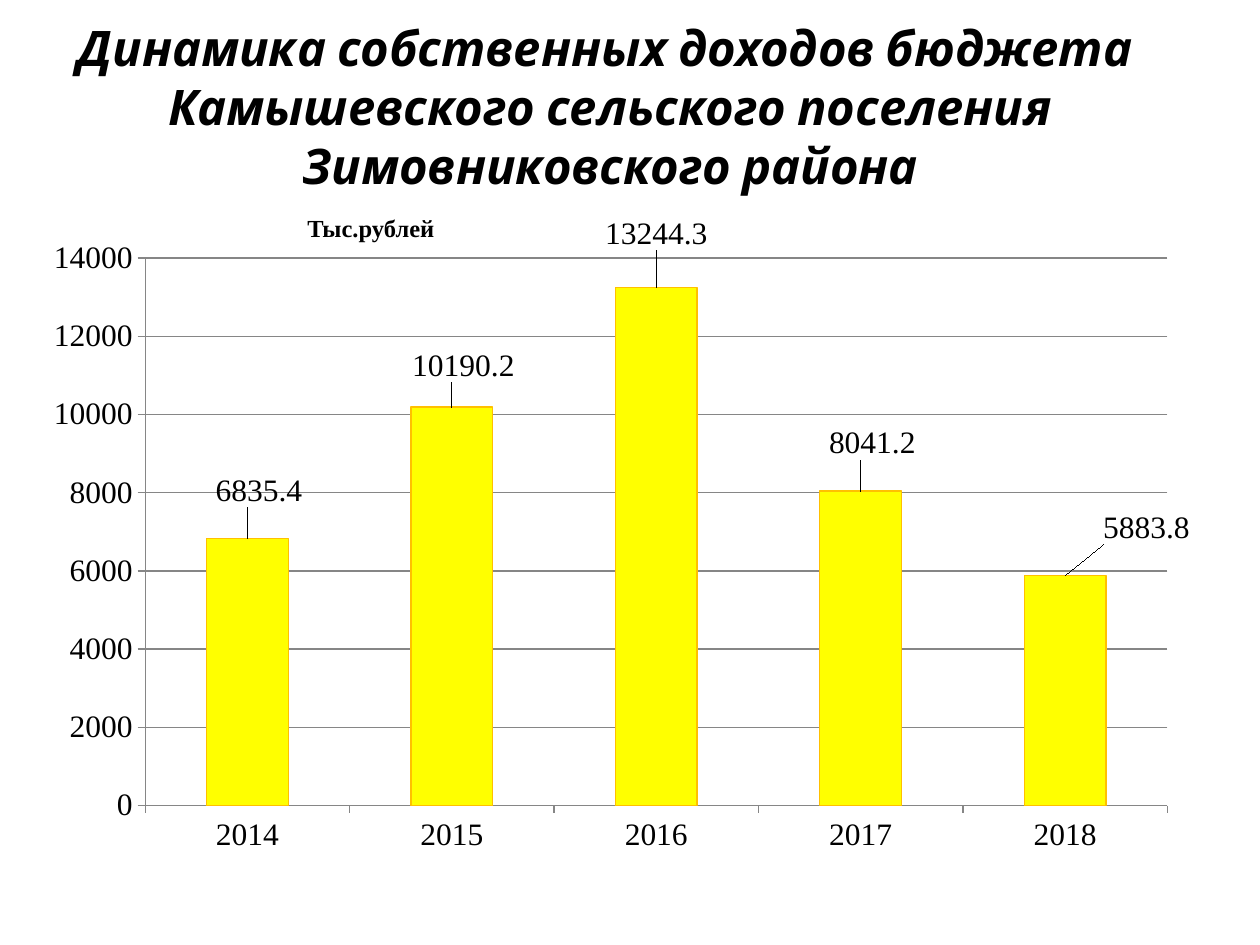
from lxml import etree
from pptx import Presentation
from pptx.chart.data import CategoryChartData
from pptx.dml.color import RGBColor
from pptx.enum import chart as charts, text
from pptx.oxml.ns import qn
from pptx.util import Inches, Pt

BLACK = RGBColor(0x00, 0x00, 0x00)
YELLOW = RGBColor(0xFF, 0xFF, 0x00)
ORANGE = RGBColor(0xFF, 0xC0, 0x00)
GREY = RGBColor(0x86, 0x86, 0x86)
SERIF = "Times New Roman"

# Year, income, and label shift as fractions of the chart size
INCOMES = [
    ("2014", 6835.4, (0.01, -0.04)),
    ("2015", 10190.2, (0.01, -0.03)),
    ("2016", 13244.3, (0, -0.05)),
    ("2017", 8041.2, (0.01, -0.04)),
    ("2018", 5883.8, (0.07, -0.04)),
]


def add_text(page, content, left, top, width, height, *, size, font=SERIF,
             italic=False, align=text.PP_ALIGN.LEFT, anchor=text.MSO_ANCHOR.TOP):
    box = page.shapes.add_textbox(Inches(left), Inches(top), Inches(width), Inches(height))
    frame = box.text_frame
    frame.word_wrap = True
    frame.vertical_anchor = anchor
    para = frame.paragraphs[0]
    para.text = content
    para.alignment = align
    for span in para.runs:
        span.font.name = font
        span.font.size = Pt(size)
        span.font.bold = True
        span.font.italic = italic
        span.font.color.rgb = BLACK


def make_layout(**settings):
    """Return a manual chart layout holding the given settings."""
    layout = etree.Element(qn("c:layout"))
    manual = etree.SubElement(layout, qn("c:manualLayout"))
    for name, value in settings.items():
        etree.SubElement(manual, qn(f"c:{name}")).set("val", str(value))
    return layout


def style_axis(axis):
    axis.major_tick_mark = charts.XL_TICK_MARK.OUTSIDE
    axis.minor_tick_mark = charts.XL_TICK_MARK.NONE
    axis.format.line.color.rgb = GREY
    axis.format.line.width = Pt(0.75)


def add_income_chart(page, left, top, width, height):
    data = CategoryChartData(number_format="General")
    data.categories = [year for year, _, _ in INCOMES]
    data.add_series("Series 1", [income for _, income, _ in INCOMES])
    chart = page.shapes.add_chart(
        charts.XL_CHART_TYPE.COLUMN_CLUSTERED, Inches(left), Inches(top),
        Inches(width), Inches(height), data).chart
    chart.has_title = False
    chart.has_legend = False
    chart.font.name = SERIF
    chart.font.size = Pt(18)
    chart.font.color.rgb = BLACK

    # Axes and gridlines
    style_axis(chart.category_axis)
    style_axis(chart.value_axis)
    chart.value_axis.minimum_scale = 0
    chart.value_axis.maximum_scale = 14000
    chart.value_axis.major_unit = 2000
    chart.value_axis.has_major_gridlines = True
    chart.value_axis.major_gridlines.format.line.color.rgb = GREY

    # Columns
    plot = chart.plots[0]
    plot.gap_width = 150
    plot.vary_by_categories = False
    series = plot.series[0]
    series.format.fill.solid()
    series.format.fill.fore_color.rgb = YELLOW
    series.format.line.color.rgb = ORANGE
    series.format.line.width = Pt(0.75)

    # Value labels, each moved away from its column
    series.data_labels.show_value = True
    for index in range(len(INCOMES)):
        label = series.points[index].data_label
        label.position = charts.XL_LABEL_POSITION.OUTSIDE_END
    labels = chart.element.findall(".//" + qn("c:dLbl"))
    for label, (_, _, (right, down)) in zip(labels, INCOMES):
        label.insert(1, make_layout(x=right, y=down))

    # Place of the plot inside the chart
    area = chart.element.find(".//" + qn("c:plotArea"))
    for old in area.findall(qn("c:layout")):
        area.remove(old)
    area.insert(0, make_layout(layoutTarget="inner", xMode="edge", yMode="edge",
                               x=0.1, y=0.055, w=0.88, h=0.85))


def main():
    deck = Presentation()
    deck.slide_width, deck.slide_height = Inches(10), Inches(7.5)
    page = deck.slides.add_slide(deck.slide_layouts[6])

    # Title
    add_text(page, "Динамика собственных доходов бюджета \v"
             "Камышевского сельского поселения Зимовниковского района",
             0.39, 0.16, 8.91, 1.36, size=28, font="Cabin", italic=True,
             align=text.PP_ALIGN.CENTER, anchor=text.MSO_ANCHOR.MIDDLE)

    # Chart and its unit
    add_income_chart(page, 0.23, 1.72, 9.22, 5.16)
    add_text(page, "Тыс.рублей", 2.34, 1.64, 1.41, 0.34, size=14)

    deck.save("out.pptx")


if __name__ == "__main__":
    main()
